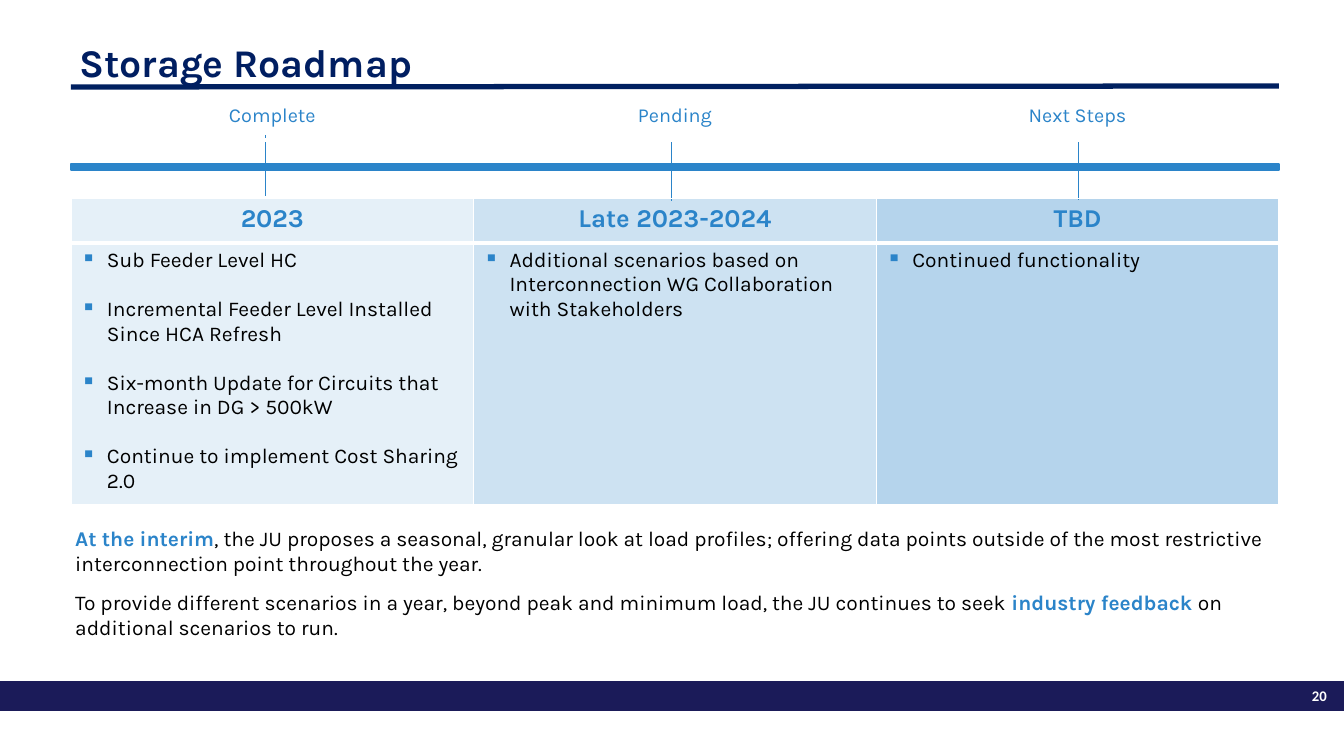
from dataclasses import dataclass

from lxml import etree
from pptx import Presentation
from pptx.dml.color import RGBColor
from pptx.enum.shapes import MSO_CONNECTOR, MSO_SHAPE
from pptx.enum.text import MSO_ANCHOR, PP_ALIGN
from pptx.oxml.ns import qn
from pptx.util import Emu, Pt

STRAIGHT = MSO_CONNECTOR.STRAIGHT
RECTANGLE = MSO_SHAPE.RECTANGLE
TOP, MIDDLE = MSO_ANCHOR.TOP, MSO_ANCHOR.MIDDLE
LEFT, CENTER, RIGHT = PP_ALIGN.LEFT, PP_ALIGN.CENTER, PP_ALIGN.RIGHT


@dataclass(frozen=True)
class Theme:
    font: str = "Karla"
    number_font: str = "Calibri"
    title_navy: str = "001E61"
    rule_navy: str = "002060"
    footer_navy: str = "1B1B59"
    blue: str = "2B84C9"
    black: str = "000000"
    white: str = "FFFFFF"
    title_size: float = 33.6
    period_size: float = 22
    text_size: float = 18
    status_size: float = 17
    number_size: float = 12.6


@dataclass(frozen=True)
class Phase:
    status: str
    period: str
    items: tuple[str, ...]
    opacity: int  # percent of blue
    tick_x: int
    tick_top: int


@dataclass(frozen=True)
class Phrase:
    text: str
    strong: bool = False


THEME = Theme()
PHASES = (
    Phase("Complete", "2023", (
        "Sub Feeder Level HC",
        "Incremental Feeder Level Installed Since HCA Refresh",
        "Six-month Update for Circuits that Increase in DG > 500kW",
        "Continue to implement Cost Sharing 2.0",
    ), 12, 265, 135),
    Phase("Pending", "Late 2023-2024", (
        "Additional scenarios based on Interconnection WG Collaboration with Stakeholders",
    ), 23, 671, 140),
    Phase("Next Steps", "TBD", ("Continued functionality",), 35, 1078, 139),
)
SUMMARY = (
    (Phrase("At the interim", True),
     Phrase(", the JU proposes a seasonal, granular look at load profiles; offering data "
            "points outside of the most restrictive interconnection point throughout the year.")),
    (Phrase("To provide different scenarios in a year, beyond peak and minimum load, "
            "the JU continues to seek "),
     Phrase("industry feedback ", True),
     Phrase("on additional scenarios to run.")),
)
MARGIN_X, CONTENT_W = 71, 1208
TICK_H = 61


def px(length: float) -> Emu:
    return Emu(round(length * 914400 / 84))


def rgb(color: str) -> RGBColor:
    return RGBColor.from_string(color)


def style(font, size: float, color: str, bold: bool = False, name: str = THEME.font) -> None:
    font.name, font.size, font.bold = name, Pt(size), bold
    font.color.rgb = rgb(color)


def add_bar(slide, x: int, y: int, w: int, h: int, color: str) -> None:
    bar = slide.shapes.add_shape(RECTANGLE, px(x), px(y), px(w), px(h))
    bar.shadow.inherit = False
    bar.fill.solid()
    bar.fill.fore_color.rgb = rgb(color)
    bar.line.color.rgb = rgb(color)
    bar.line.width = Pt(1)


def add_line(slide, x1: int, y1: int, x2: int, y2: int, color: str, width: float) -> None:
    line = slide.shapes.add_connector(STRAIGHT, px(x1), px(y1), px(x2), px(y2))
    line.line.color.rgb = rgb(color)
    line.line.width = Pt(width)
    etree.SubElement(line._element.spPr, qn("a:effectLst"))


def add_text_frame(slide, x: int, y: int, w: int, h: int, anchor=TOP):
    frame = slide.shapes.add_textbox(px(x), px(y), px(w), px(h)).text_frame
    frame.word_wrap = True
    frame.vertical_anchor = anchor
    return frame


def add_label(slide, x: int, y: int, w: int, h: int, text: str, align, anchor,
              size: float, color: str, name: str = THEME.font) -> None:
    paragraph = add_text_frame(slide, x, y, w, h, anchor).paragraphs[0]
    paragraph.text = text
    paragraph.alignment = align
    style(paragraph.font, size, color, True, name)


def add_table(slide, y: int, row_heights: tuple[int, ...]):
    table = slide.shapes.add_table(len(row_heights), len(PHASES), px(MARGIN_X), px(y),
                                   px(CONTENT_W), px(sum(row_heights))).table
    table.first_row = table.horz_banding = False
    for row, height in zip(table.rows, row_heights):
        row.height = px(height)
    for column in table.columns:
        column.width = px(CONTENT_W / len(PHASES))
    return table


def format_cell(cell, opacity: int, top: float, bottom: float) -> None:
    cell.margin_left = cell.margin_right = px(10)
    cell.margin_top = cell.margin_bottom = px(5)
    if opacity:
        cell.fill.solid()
        cell.fill.fore_color.rgb = rgb(THEME.blue)
        shade = cell._tc.tcPr.find(".//" + qn("a:srgbClr"))
        etree.SubElement(shade, qn("a:alpha"), val=str(opacity * 1000))
    else:
        cell.fill.background()
    for index, (side, width) in enumerate((("L", 1), ("R", 1), ("T", top), ("B", bottom))):
        border = etree.Element(qn(f"a:ln{side}"), w=str(Pt(width)))
        fill = etree.SubElement(border, qn("a:solidFill"))
        etree.SubElement(fill, qn("a:srgbClr"), val=THEME.white)
        cell._tc.tcPr.insert(index, border)


def fill_heading(cell, text: str, size: float, bold: bool, opacity: int = 0) -> None:
    format_cell(cell, opacity, 1, 3)
    paragraph = cell.text_frame.paragraphs[0]
    paragraph.text = text
    paragraph.alignment = CENTER
    style(paragraph.font, size, THEME.blue, bold)


def fill_items(cell, items: tuple[str, ...], opacity: int) -> None:
    format_cell(cell, opacity, 3, 1)
    frame = cell.text_frame
    for index, item in enumerate(items):
        paragraph = frame.add_paragraph() if index else frame.paragraphs[0]
        paragraph.text = item
        properties = paragraph._p.get_or_add_pPr()
        properties.set("marL", str(px(26)))
        properties.set("indent", str(-px(26)))
        bullet_color = etree.SubElement(properties, qn("a:buClr"))
        etree.SubElement(bullet_color, qn("a:srgbClr"), val=THEME.blue)
        etree.SubElement(properties, qn("a:buChar"), char="▪")
        if index:
            paragraph.space_before = Pt(21)
        style(paragraph.font, THEME.text_size, THEME.black)


def add_summary(slide) -> None:
    frame = add_text_frame(slide, 67, 521, CONTENT_W, 130)
    for index, phrases in enumerate(SUMMARY):
        paragraph = frame.add_paragraph() if index else frame.paragraphs[0]
        if index:
            paragraph.space_before = Pt(12)
        for phrase in phrases:
            run = paragraph.add_run()
            run.text = phrase.text
            color = THEME.blue if phrase.strong else THEME.black
            style(run.font, THEME.text_size, color, phrase.strong)


def main() -> None:
    deck = Presentation()
    deck.slide_width, deck.slide_height = px(1344), px(756)
    slide = deck.slides.add_slide(deck.slide_layouts[6])

    # Footer and title
    add_bar(slide, 0, 682, 1344, 28, THEME.footer_navy)
    add_label(slide, 1279, 683, 56, 26, "20", RIGHT, TOP,
              THEME.number_size, THEME.white, THEME.number_font)
    add_line(slide, MARGIN_X, 87, MARGIN_X + CONTENT_W, 86, THEME.rule_navy, 4.5)
    add_label(slide, MARGIN_X, 39, CONTENT_W, 45, "Storage Roadmap", LEFT, MIDDLE,
              THEME.title_size, THEME.title_navy)

    # Timeline
    add_bar(slide, MARGIN_X, 164, CONTENT_W, 6, THEME.blue)
    for phase in PHASES:
        add_line(slide, phase.tick_x, phase.tick_top, phase.tick_x,
                 phase.tick_top + TICK_H, THEME.blue, 0.5)

    # Phase details and status labels
    details = add_table(slide, 199, (44, 262))
    statuses = add_table(slide, 99, (41,))
    for column, phase in enumerate(PHASES):
        fill_heading(details.cell(0, column), phase.period, THEME.period_size, True, phase.opacity)
        fill_items(details.cell(1, column), phase.items, phase.opacity)
        fill_heading(statuses.cell(0, column), phase.status, THEME.status_size, False)

    # Closing statements
    add_summary(slide)
    deck.save("out.pptx")


if __name__ == "__main__":
    main()
